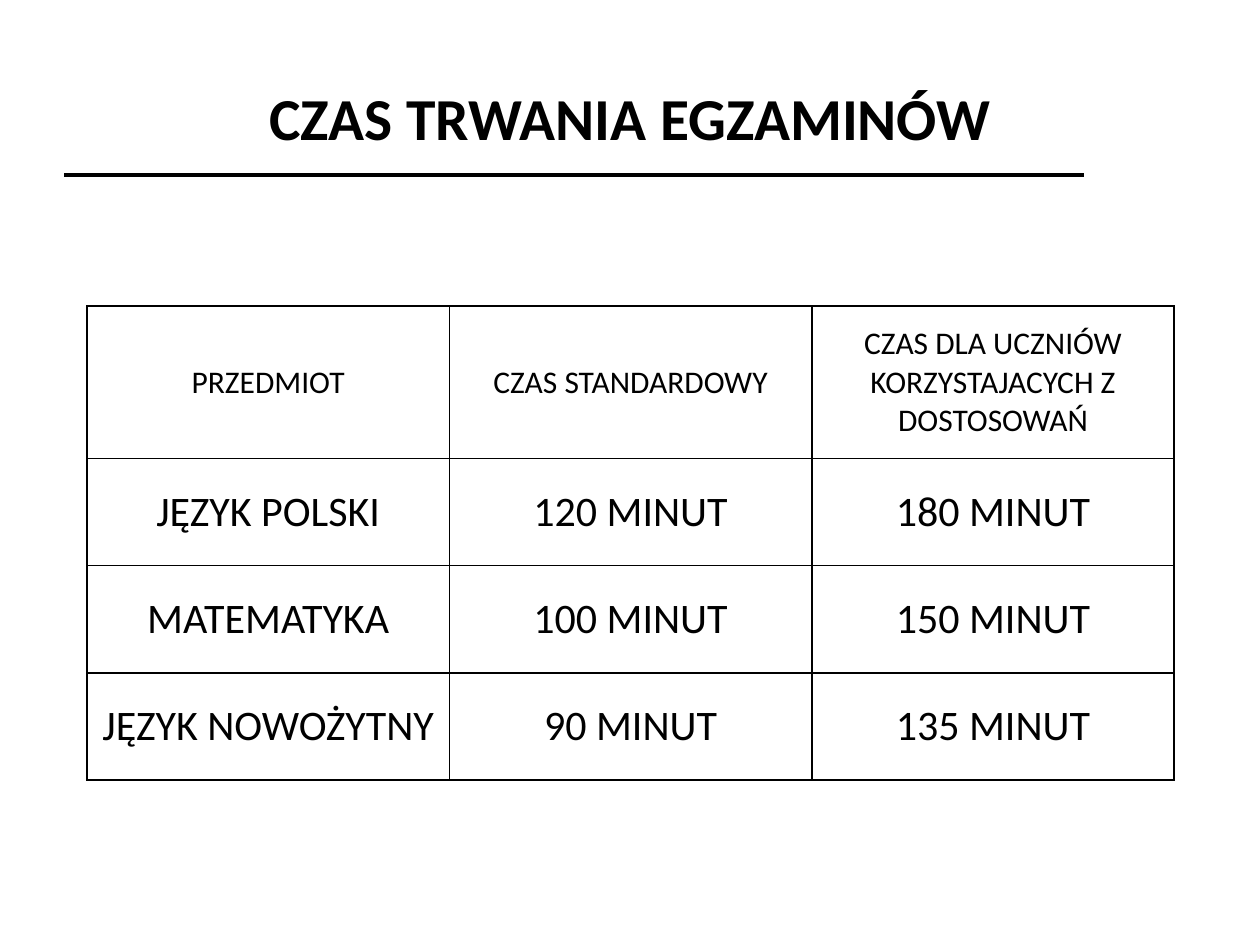
from dataclasses import dataclass

from lxml.etree import SubElement
from pptx import Presentation
from pptx.dml.color import RGBColor
from pptx.enum.shapes import MSO_CONNECTOR
from pptx.enum.text import MSO_ANCHOR, PP_ALIGN
from pptx.oxml.ns import qn
from pptx.slide import Slide
from pptx.util import Inches, Pt

BLACK = RGBColor(0, 0, 0)
WHITE = RGBColor(255, 255, 255)
TITLE = {"name": "Calibri", "size": Pt(34), "bold": True}
HEAD = {"name": "Calibri", "size": Pt(18), "bold": False}
BODY = {"name": "Calibri", "size": Pt(24), "bold": False}
FRAME = {
    "word_wrap": True,
    "vertical_anchor": MSO_ANCHOR.MIDDLE,
    "margin_left": Inches(0.1),
    "margin_right": Inches(0.1),
    "margin_top": Inches(0.05),
    "margin_bottom": Inches(0.05),
}
CELL = {
    "vertical_anchor": MSO_ANCHOR.MIDDLE,
    "margin_left": Inches(0.07),
    "margin_right": Inches(0.07),
    "margin_top": Inches(0.04),
    "margin_bottom": Inches(0.04),
}
PLAIN = {"first_row": False, "horz_banding": False}


@dataclass
class Row:
    texts: tuple[str, str, str]
    height: float
    font: dict


ROWS = [
    Row(("PRZEDMIOT", "CZAS STANDARDOWY",
         "CZAS DLA UCZNIÓW KORZYSTAJACYCH Z DOSTOSOWAŃ"), 1.21, HEAD),
    Row(("JĘZYK POLSKI", "120 MINUT", "180 MINUT"), 0.85, BODY),
    Row(("MATEMATYKA", "100 MINUT", "150 MINUT"), 0.85, BODY),
    Row(("JĘZYK NOWOŻYTNY", "90 MINUT", "135 MINUT"), 0.85, BODY),
]


def apply(target, values: dict) -> None:
    for key, value in values.items():
        setattr(target, key, value)


def write(frame, text: str, font: dict) -> None:
    para = frame.paragraphs[0]
    para.alignment = PP_ALIGN.CENTER
    run = para.add_run()
    run.text = text
    apply(run.font, font)
    run.font.color.rgb = BLACK


def border(cell) -> None:
    props = cell._tc.get_or_add_tcPr()
    for side in ("lnL", "lnR", "lnT", "lnB"):
        line = SubElement(props, qn(f"a:{side}"), w=str(Pt(1)))
        fill = SubElement(line, qn("a:solidFill"))
        SubElement(fill, qn("a:srgbClr"), val=str(BLACK))


def draw_rule(slide: Slide) -> None:
    rule = slide.shapes.add_connector(
        MSO_CONNECTOR.STRAIGHT,
        Inches(0.51), Inches(1.39), Inches(8.6), Inches(1.39))
    rule.line.color.rgb = BLACK
    rule.line.width = Pt(2)
    SubElement(rule._element.spPr, qn("a:effectLst"))


def draw_title(slide: Slide, text: str) -> None:
    box = slide.shapes.add_textbox(
        Inches(0.5), Inches(0.14), Inches(9), Inches(1.57))
    apply(box.text_frame, FRAME)
    write(box.text_frame, text, TITLE)


def draw_table(slide: Slide, rows: list[Row]) -> None:
    count = len(rows[0].texts)
    height = sum(row.height for row in rows)
    table = slide.shapes.add_table(
        len(rows), count, Inches(0.69), Inches(2.43),
        Inches(8.63), Inches(height)).table
    apply(table, PLAIN)
    for r, row in enumerate(rows):
        table.rows[r].height = Inches(row.height)
        for c, text in enumerate(row.texts):
            cell = table.cell(r, c)
            apply(cell, CELL)
            border(cell)
            cell.fill.background()
            write(cell.text_frame, text, row.font)


def main() -> None:
    deck = Presentation()
    deck.slide_width = Inches(10)
    deck.slide_height = Inches(7.5)
    slide = deck.slides.add_slide(deck.slide_layouts[6])
    slide.background.fill.solid()
    slide.background.fill.fore_color.rgb = WHITE
    draw_rule(slide)
    draw_title(slide, "CZAS TRWANIA EGZAMINÓW")
    draw_table(slide, ROWS)
    deck.save("out.pptx")


if __name__ == "__main__":
    main()
